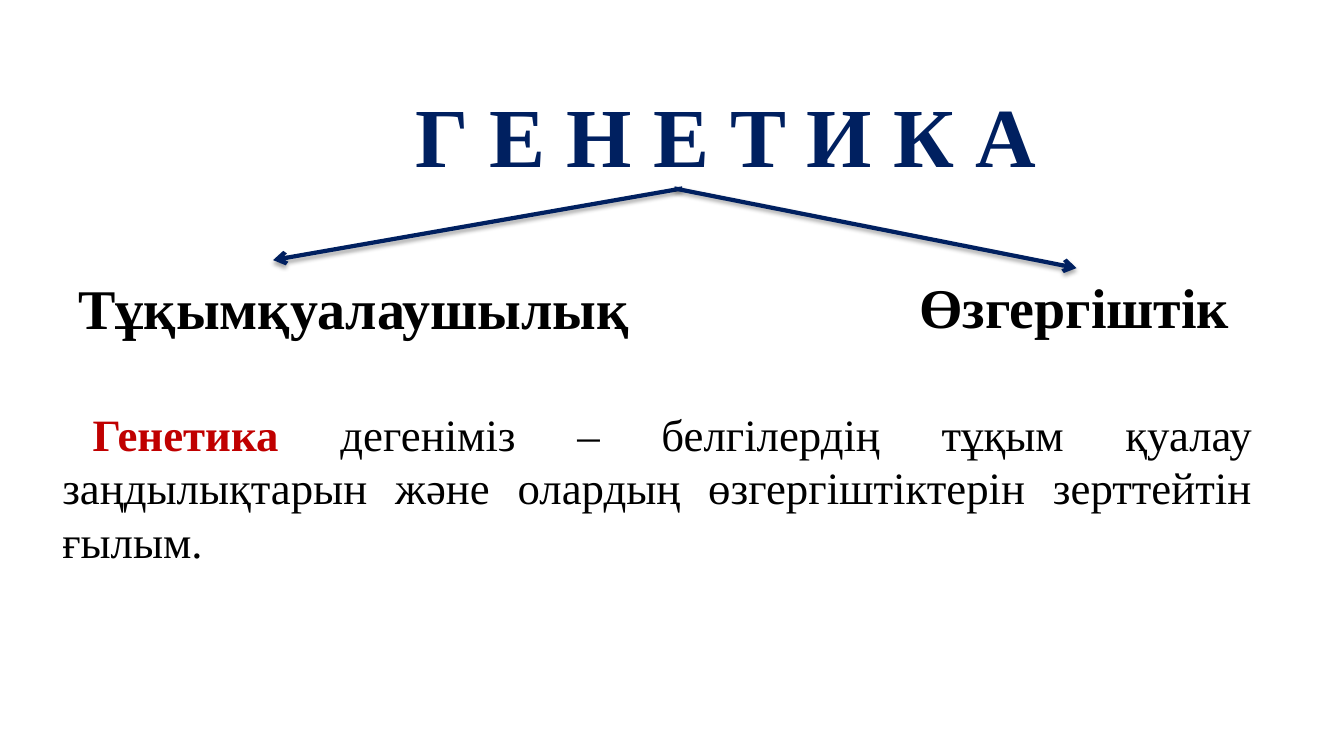
from dataclasses import dataclass

from lxml.etree import SubElement
from pptx import Presentation
from pptx.dml.color import RGBColor
from pptx.enum.shapes import MSO_CONNECTOR
from pptx.enum.text import MSO_AUTO_SIZE, PP_ALIGN
from pptx.oxml.ns import qn
from pptx.util import Pt


@dataclass(frozen=True)
class Theme:
    """Colours, font and type sizes of the slide."""
    font: str = "Times New Roman"
    navy: str = "002060"
    red: str = "C00000"
    black: str = "000000"
    title: int = 60
    head: int = 40
    body: int = 32
    line: int = 3


THEME = Theme()


def style(run, size, color, bold):
    """Set the font of one run."""
    font = run.font
    font.name = THEME.font
    font.size = Pt(size)
    font.bold = bold
    font.color.rgb = RGBColor.from_string(color)


def add_text(slide, box, parts, size, align=PP_ALIGN.LEFT, wrap=False):
    """Add a one-paragraph text box from (text, colour, bold) parts."""
    frame = slide.shapes.add_textbox(*map(Pt, box)).text_frame
    frame.word_wrap = wrap
    frame.auto_size = MSO_AUTO_SIZE.SHAPE_TO_FIT_TEXT
    para = frame.paragraphs[0]
    para.alignment = align
    for text, color, bold in parts:
        run = para.add_run()
        run.text = text
        style(run, size, color, bold)
    return para


def add_arrow(slide, start, end):
    """Add a navy arrow with a soft shadow below it."""
    arrow = slide.shapes.add_connector(
        MSO_CONNECTOR.STRAIGHT, *map(Pt, start + end))
    arrow.line.color.rgb = RGBColor.from_string(THEME.navy)
    arrow.line.width = Pt(THEME.line)
    props = arrow.element.spPr
    SubElement(props.find(qn("a:ln")), qn("a:tailEnd"), type="arrow")
    effects = SubElement(props, qn("a:effectLst"))
    shadow = SubElement(
        effects, qn("a:outerShdw"), blurRad=str(Pt(3.1)),
        dist=str(Pt(1.8)), dir="5400000", rotWithShape="0")
    color = SubElement(shadow, qn("a:srgbClr"), val=THEME.black)
    SubElement(color, qn("a:alpha"), val="35000")


def main():
    """Build the slide and save it."""
    deck = Presentation()
    deck.slide_width, deck.slide_height = Pt(960), Pt(540)
    slide = deck.slides.add_slide(deck.slide_layouts[6])

    add_text(slide, (287.3, 56.2, 462.2, 80),
             [("Г Е Н Е Т И К А", THEME.navy, True)],
             THEME.title, PP_ALIGN.CENTER)
    heads = (("Тұқымқуалаушылық", (49, 191.5, 411.8, 55.4)),
             ("Өзгергіштік", (649.4, 190.8, 238.3, 55.4)))
    for text, box in heads:
        add_text(slide, box, [(text, THEME.black, True)], THEME.head)

    add_arrow(slide, (487.4, 134.6), (195.1, 185.8))
    add_arrow(slide, (481.7, 134.6), (769, 191.5))

    rest = (" дегеніміз – белгілердің тұқым қуалау заңдылықтарын "
            "және олардың өзгергіштіктерін зерттейтін ғылым.")
    para = add_text(slide, (37.4, 286.6, 864.7, 123.8),
                    [("Генетика", THEME.red, True),
                     (rest, THEME.black, False)],
                    THEME.body, PP_ALIGN.JUSTIFY, True)
    para._p.get_or_add_pPr().set("indent", str(Pt(21.6)))

    deck.save("out.pptx")


if __name__ == "__main__":
    main()
